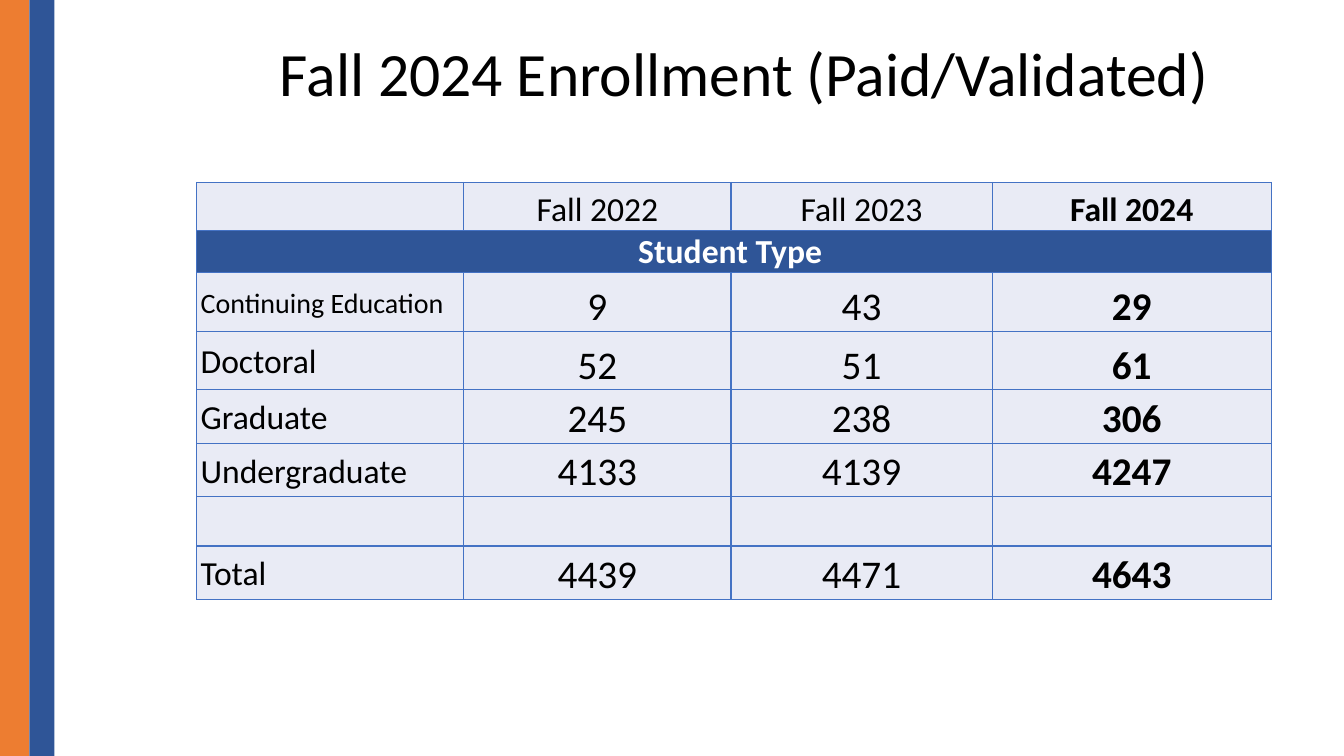
from lxml import etree
from pptx import Presentation
from pptx.dml.color import RGBColor
from pptx.enum.shapes import MSO_SHAPE
from pptx.enum.text import MSO_ANCHOR, PP_ALIGN
from pptx.oxml.ns import qn
from pptx.util import Inches, Pt

RECTANGLE = MSO_SHAPE.RECTANGLE
MIDDLE, BOTTOM = MSO_ANCHOR.MIDDLE, MSO_ANCHOR.BOTTOM
LEFT, CENTER = PP_ALIGN.LEFT, PP_ALIGN.CENTER

TITLE = "Fall 2024 Enrollment (Paid/Validated)"
TERMS = ["", "Fall 2022", "Fall 2023", "Fall 2024"]
SECTION = "Student Type "
ENROLLMENT = [
    ("Continuing Education", 9, 43, 29),
    ("Doctoral", 52, 51, 61),
    ("Graduate", 245, 238, 306),
    ("Undergraduate", 4133, 4139, 4247),
    ("", "", "", ""),
    ("Total", 4439, 4471, 4643),
]
LABEL_SIZES = {"Continuing Education": 20}

COLORS = {
    "orange": "ED7D31",
    "blue": "2F5597",
    "border": "4472C4",
    "cell": "E9EBF5",
    "text": "000000",
    "section text": "FFFFFF",
}
FONT = "Calibri"
SLIDE_WIDTH, SLIDE_HEIGHT = 13.33, 7.5
STRIPES = [("orange", 0.29), ("blue", 0.25)]
TABLE_LEFT, TABLE_TOP = 1.95, 1.81
COLUMN_WIDTHS = [2.65, 2.65, 2.59, 2.77]
ROW_HEIGHTS = [0.48, 0.41, 0.58, 0.58, 0.53, 0.53, 0.49, 0.53]


def rgb(name):
    return RGBColor.from_string(COLORS[name])


def style_paragraph(paragraph, size, color="text", bold=False, align=CENTER):
    paragraph.alignment = align
    for run in paragraph.runs:
        run.font.name = FONT
        run.font.size = Pt(size)
        run.font.bold = bold
        run.font.color.rgb = rgb(color)


def add_borders(cell):
    properties = cell._tc.get_or_add_tcPr()
    for position, side in enumerate(("a:lnL", "a:lnR", "a:lnT", "a:lnB")):
        line = etree.Element(qn(side), w=str(Pt(1)))
        fill = etree.SubElement(line, qn("a:solidFill"))
        etree.SubElement(fill, qn("a:srgbClr"), val=COLORS["border"])
        properties.insert(position, line)


def fill_cell(cell, value, size, fill="cell", color="text", bold=False, label=False):
    cell.fill.solid()
    cell.fill.fore_color.rgb = rgb(fill)
    add_borders(cell)
    if value == "":
        return
    cell.text_frame.text = str(value)
    cell.vertical_anchor = MIDDLE if label else BOTTOM
    cell.margin_left = cell.margin_right = Inches(0.04 if label else 0.01)
    cell.margin_top, cell.margin_bottom = Inches(0.01), 0
    paragraph = cell.text_frame.paragraphs[0]
    style_paragraph(paragraph, size, color, bold, LEFT if label else CENTER)
    if label:
        paragraph.line_spacing = 1.07
        paragraph.space_after = Pt(8)


def add_stripes(slide):
    left = 0
    for color, width in STRIPES:
        stripe = slide.shapes.add_shape(
            RECTANGLE, Inches(left), 0, Inches(width), Inches(SLIDE_HEIGHT))
        stripe.shadow.inherit = False
        stripe.fill.solid()
        stripe.fill.fore_color.rgb = rgb(color)
        stripe.line.fill.background()
        left += width


def add_title(slide):
    title = slide.shapes.title
    title.left, title.top = Inches(2.32), Inches(0.03)
    title.width, title.height = Inches(10.13), Inches(1.45)
    title.text_frame.text = TITLE
    title.text_frame.vertical_anchor = MIDDLE
    heading = title.text_frame.paragraphs[0]
    style_paragraph(heading, 44)
    heading.line_spacing = 0.9


def add_enrollment_table(slide):
    table = slide.shapes.add_table(
        len(ROW_HEIGHTS), len(COLUMN_WIDTHS), Inches(TABLE_LEFT), Inches(TABLE_TOP),
        Inches(sum(COLUMN_WIDTHS)), Inches(sum(ROW_HEIGHTS))).table
    table.horz_banding = False
    table.first_row = False
    for column, width in zip(table.columns, COLUMN_WIDTHS):
        column.width = Inches(width)
    for row, height in zip(table.rows, ROW_HEIGHTS):
        row.height = Inches(height)

    latest = len(TERMS) - 1
    for c, term in enumerate(TERMS):
        fill_cell(table.cell(0, c), term, 24, bold=c == latest)
        fill_cell(table.cell(1, c), SECTION if c == 0 else "", 24,
                  "blue", "section text", True)
    table.cell(1, 0).merge(table.cell(1, latest))
    for r, values in enumerate(ENROLLMENT, start=2):
        for c, value in enumerate(values):
            size = 28 if c else LABEL_SIZES.get(value, 24)
            fill_cell(table.cell(r, c), value, size, bold=c == latest, label=c == 0)


def main():
    presentation = Presentation()
    presentation.slide_width = Inches(SLIDE_WIDTH)
    presentation.slide_height = Inches(SLIDE_HEIGHT)
    slide = presentation.slides.add_slide(
        presentation.slide_layouts.get_by_name("Title Only"))
    add_stripes(slide)
    add_title(slide)
    add_enrollment_table(slide)
    presentation.save("out.pptx")


if __name__ == "__main__":
    main()
